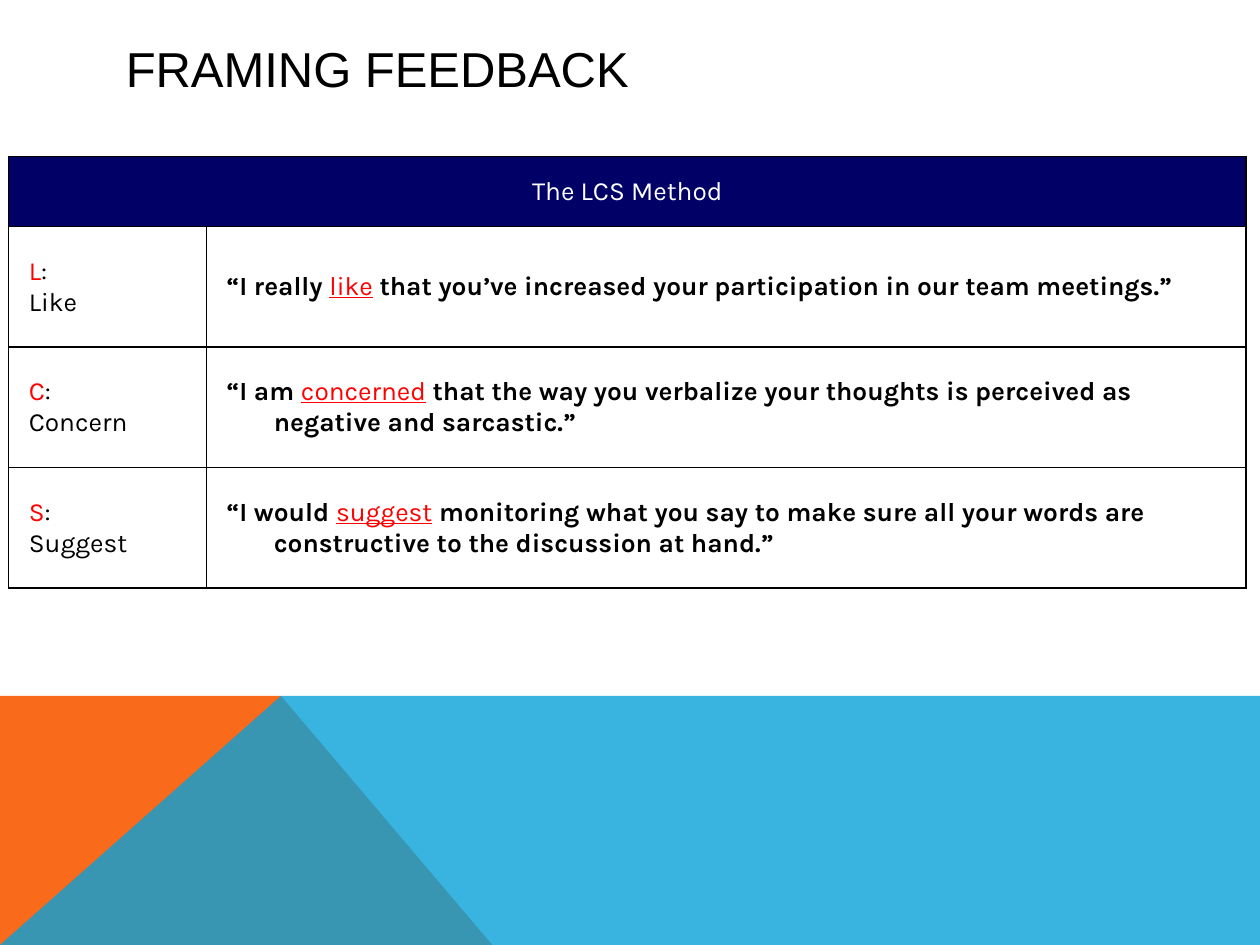
from typing import NamedTuple

import lxml.etree
import pptx
import pptx.dml.color
import pptx.enum.text
import pptx.oxml.ns
import pptx.util

Pt = pptx.util.Pt
RGBColor = pptx.dml.color.RGBColor
Align = pptx.enum.text.PP_ALIGN
Anchor = pptx.enum.text.MSO_ANCHOR
qn = pptx.oxml.ns.qn

BLACK = RGBColor(0x00, 0x00, 0x00)
WHITE = RGBColor(0xFF, 0xFF, 0xFF)
RED = RGBColor(0xFF, 0x00, 0x00)
NAVY = RGBColor(0x00, 0x00, 0x66)
ORANGE = RGBColor(0xF9, 0x6A, 0x1B)
BLUE = RGBColor(0x08, 0xA1, 0xD9)

PAGE_WIDTH, PAGE_HEIGHT = 720, 540
BAND_TOP = 397.7
PEAK = (160.6, BAND_TOP)
COLUMN_WIDTHS = (113, 594)
HEADER_HEIGHT, ROW_HEIGHT = 40.2, 68.9
HANGING_INDENT = 27


class Step(NamedTuple):
    name: str
    opening: str
    keyword: str
    rest: str


STEPS = (
    Step("Like", "“I really ", "like",
         " that you’ve increased your participation in our team meetings.”"),
    Step("Concern", "“I am ", "concerned",
         " that the way you verbalize your thoughts is perceived as negative and sarcastic.”"),
    Step("Suggest", "“I would ", "suggest",
         " monitoring what you say to make sure all your words are constructive"
         " to the discussion at hand.”"),
)


def add_span(para, text: str, *, size: float = 15, font: str = "Karla",
             color: RGBColor = BLACK, bold: bool = False, underline: bool = False) -> None:
    span = para.add_run()
    span.text = text
    span.font.size = Pt(size)
    span.font.name = font
    span.font.color.rgb = color
    span.font.bold = bold
    span.font.underline = underline


def add_polygon(page, points: list[tuple[float, float]], color: RGBColor,
                opacity: int = 100) -> None:
    builder = page.shapes.build_freeform(Pt(points[0][0]), Pt(points[0][1]))
    builder.add_line_segments([(Pt(x), Pt(y)) for x, y in points[1:]], close=True)
    shape = builder.convert_to_shape()
    shape.shadow.inherit = False
    shape.fill.solid()
    shape.fill.fore_color.rgb = color
    shape.line.fill.background()
    if opacity < 100:
        tint = shape.fill._xPr.find(".//" + qn("a:srgbClr"))
        lxml.etree.SubElement(tint, qn("a:alpha"), val=str(opacity * 1000))


def add_title(page, text: str) -> None:
    box = page.shapes.add_textbox(Pt(64.8), Pt(5.8), Pt(498.2), Pt(66.2))
    frame = box.text_frame
    frame.word_wrap = True
    frame.vertical_anchor = Anchor.MIDDLE
    add_span(frame.paragraphs[0], text, size=28, font="Arial")


def add_borders(cell) -> None:
    properties = cell._tc.get_or_add_tcPr()
    for position, side in enumerate(("lnL", "lnR", "lnT", "lnB")):
        line = lxml.etree.Element(qn("a:" + side), w=str(Pt(1)))
        fill = lxml.etree.SubElement(line, qn("a:solidFill"))
        lxml.etree.SubElement(fill, qn("a:srgbClr"), val=str(BLACK))
        properties.insert(position, line)


def format_cell(cell, margin_x: float, margin_y: float) -> None:
    cell.vertical_anchor = Anchor.MIDDLE
    cell.margin_left = cell.margin_right = Pt(margin_x)
    cell.margin_top = cell.margin_bottom = Pt(margin_y)
    cell.fill.background()
    add_borders(cell)


def hang(para):
    """Give the paragraph its hanging indent."""
    properties = para._p.get_or_add_pPr()
    properties.set("marL", str(Pt(HANGING_INDENT)))
    properties.set("indent", str(-Pt(HANGING_INDENT)))
    return para


def fill_step(name_cell, quote_cell, step: Step) -> None:
    initial = hang(name_cell.text_frame.paragraphs[0])
    add_span(initial, step.name[0], color=RED)
    add_span(initial, ":")
    add_span(hang(name_cell.text_frame.add_paragraph()), step.name)

    quote = hang(quote_cell.text_frame.paragraphs[0])
    add_span(quote, step.opening, bold=True)
    add_span(quote, step.keyword, color=RED, underline=True)
    add_span(quote, step.rest, bold=True)


def add_method_table(page) -> None:
    height = HEADER_HEIGHT + ROW_HEIGHT * len(STEPS)
    table = page.shapes.add_table(len(STEPS) + 1, 2, Pt(5), Pt(89.3),
                                  Pt(sum(COLUMN_WIDTHS)), Pt(height)).table
    table.first_row = table.horz_banding = False
    for column, width in zip(table.columns, COLUMN_WIDTHS):
        column.width = Pt(width)
    for number, row in enumerate(table.rows):
        row.height = Pt(ROW_HEIGHT if number else HEADER_HEIGHT)
        for cell in row.cells:
            format_cell(cell, *((11.5, 5.8) if number else (6.5, 3.6)))

    header = table.cell(0, 0)
    header.merge(table.cell(0, 1))
    header.fill.solid()
    header.fill.fore_color.rgb = NAVY
    para = hang(header.text_frame.paragraphs[0])
    para.alignment = Align.CENTER
    add_span(para, "The LCS Method", color=WHITE)
    for number, step in enumerate(STEPS, start=1):
        fill_step(table.cell(number, 0), table.cell(number, 1), step)


def main() -> None:
    deck = pptx.Presentation()
    deck.slide_width, deck.slide_height = Pt(PAGE_WIDTH), Pt(PAGE_HEIGHT)
    page = deck.slides.add_slide(deck.slide_layouts[6])
    add_polygon(page, [(0, PAGE_HEIGHT), (0, BAND_TOP), PEAK, (281.3, PAGE_HEIGHT)], ORANGE)
    add_polygon(page, [(0, PAGE_HEIGHT), PEAK, (PAGE_WIDTH, BAND_TOP),
                       (PAGE_WIDTH, PAGE_HEIGHT)], BLUE, opacity=80)
    add_title(page, "FRAMING FEEDBACK")
    add_method_table(page)
    deck.save("out.pptx")


if __name__ == "__main__":
    main()
